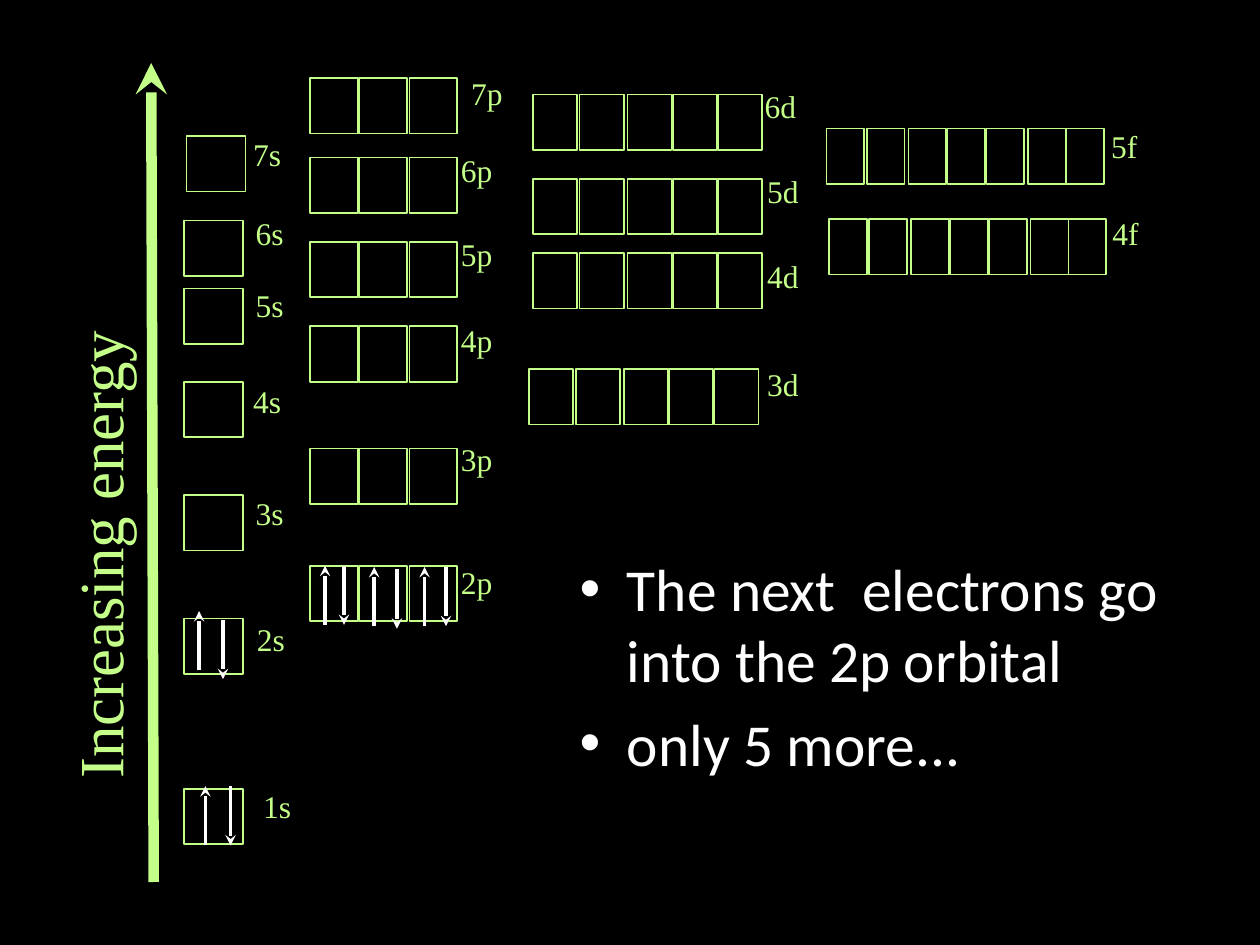
from typing import NamedTuple

from lxml import etree
from pptx import Presentation
from pptx.dml.color import RGBColor
from pptx.enum.shapes import MSO_CONNECTOR, MSO_SHAPE
from pptx.oxml.ns import qn
from pptx.util import Inches, Pt

LINE = MSO_CONNECTOR.STRAIGHT
RECT = MSO_SHAPE.RECTANGLE
BLACK = RGBColor(0, 0, 0)
WHITE = RGBColor(255, 255, 255)
GREEN = RGBColor(0xC4, 0xFF, 0x89)
SERIF = "Times New Roman"
HIGH = 0.44
SPIN = 0.47


class Kind(NamedTuple):
    """Box width and the left offset of each box in a subshell."""
    wide: float
    steps: tuple[float, ...]


class Level(NamedTuple):
    name: str
    left: float
    top: float
    tag_x: float
    tag_y: float


class Spin(NamedTuple):
    """An arrow at x, with the top of its shaft, pointing up or down."""
    x: float
    top: float
    up: bool


KINDS = {
    "s": Kind(0.47, (0,)),
    "p": Kind(0.38, (0, 0.39, 0.79)),
    "d": Kind(0.35, (0, 0.37, 0.75, 1.11, 1.47)),
    "f": Kind(0.3, (0, 0.32, 0.65, 0.96, 1.27, 1.6, 1.9)),
}

LEVELS = [
    Level("1s", 1.46, 6.26, 1.99, 6.2),
    Level("2s", 1.46, 4.91, 1.94, 4.87),
    Level("3s", 1.46, 3.93, 1.93, 3.87),
    Level("4s", 1.46, 3.03, 1.91, 2.98),
    Level("5s", 1.46, 2.29, 1.93, 2.22),
    Level("6s", 1.46, 1.75, 1.93, 1.65),
    Level("7s", 1.48, 1.08, 1.91, 1.02),
    Level("2p", 2.46, 4.49, 3.56, 4.42),
    Level("3p", 2.46, 3.56, 3.56, 3.44),
    Level("4p", 2.46, 2.59, 3.56, 2.5),
    Level("5p", 2.46, 1.92, 3.56, 1.82),
    Level("6p", 2.46, 1.25, 3.56, 1.15),
    Level("7p", 2.46, 0.62, 3.64, 0.54),
    Level("3d", 4.2, 2.93, 5.99, 2.85),
    Level("4d", 4.23, 2.01, 5.99, 1.99),
    Level("5d", 4.23, 1.42, 5.99, 1.32),
    Level("6d", 4.23, 0.75, 5.97, 0.64),
    Level("4f", 6.58, 1.74, 8.73, 1.65),
    Level("5f", 6.56, 1.02, 8.72, 0.96),
]

SPINS = [
    Spin(1.63, 6.24, True), Spin(1.83, 6.24, False),
    Spin(1.58, 4.85, True), Spin(1.77, 4.92, False),
    Spin(2.58, 4.49, True), Spin(2.73, 4.49, False),
    Spin(2.97, 4.5, True), Spin(3.15, 4.52, False),
    Spin(3.37, 4.5, True), Spin(3.54, 4.5, False),
]


def add_text(shapes, text: str, x: float, y: float, w: float, h: float,
             size: int):
    box = shapes.add_textbox(Inches(x), Inches(y), Inches(w), Inches(h))
    frame = box.text_frame
    frame.word_wrap = True
    frame.text = text
    font = frame.paragraphs[0].runs[0].font
    font.name, font.size = SERIF, Pt(size)
    font.color.rgb = GREEN
    return box


def add_arrow(shapes, x1: float, y1: float, x2: float, y2: float,
              color: RGBColor, width: int) -> None:
    """Draw a line with a stealth head at its second point."""
    arrow = shapes.add_connector(LINE, Inches(x1), Inches(y1),
                                 Inches(x2), Inches(y2))
    arrow.line.color.rgb = color
    arrow.line.width = Pt(width)
    props = arrow.element.spPr
    etree.SubElement(props.find(qn("a:ln")), qn("a:tailEnd"), type="stealth")
    etree.SubElement(props, qn("a:effectLst"))


def add_level(shapes, level: Level) -> None:
    """Draw a subshell's row of boxes and its label."""
    kind = KINDS[level.name[-1]]
    for step in kind.steps:
        box = shapes.add_shape(RECT, Inches(level.left + step),
                               Inches(level.top), Inches(kind.wide),
                               Inches(HIGH))
        box.shadow.inherit = False
        box.fill.background()
        box.line.color.rgb = GREEN
        box.line.width = Pt(1)
    add_text(shapes, level.name, level.tag_x, level.tag_y, 0.68, 0.63, 18)


def add_spin(shapes, spin: Spin) -> None:
    ends = [spin.top, spin.top + SPIN]
    if spin.up:
        ends.reverse()
    add_arrow(shapes, spin.x, ends[0], spin.x, ends[1], WHITE, 2)


def add_notes(slide) -> None:
    """Fill the body placeholder with the bullets."""
    title = slide.shapes.title.element
    title.getparent().remove(title)
    body = slide.placeholders[1]
    body.left, body.top = Inches(4.5), Inches(4.33)
    body.width, body.height = Inches(4.93), Inches(2.62)
    frame = body.text_frame
    frame.text = "The next  electrons go into the 2p orbital\nonly 5 more..."
    frame.paragraphs[0].space_before = Pt(0)
    for para in frame.paragraphs:
        font = para.runs[0].font
        font.name, font.size = "Calibri", Pt(34)
        para.font.color.rgb = font.color.rgb = WHITE


def main() -> None:
    deck = Presentation()
    deck.slide_width, deck.slide_height = Inches(10), Inches(7.5)
    slide = deck.slides.add_slide(deck.slide_layouts[1])
    slide.background.fill.solid()
    slide.background.fill.fore_color.rgb = BLACK
    shapes = slide.shapes

    add_notes(slide)
    add_arrow(shapes, 1.22, 7, 1.2, 0.5, GREEN, 6)
    axis = add_text(shapes, "Increasing energy", -1.54, 3.61, 4.64, 0.7, 36)
    axis.rotation = 270
    for level in LEVELS:
        add_level(shapes, level)
    for spin in SPINS:
        add_spin(shapes, spin)
    deck.save("out.pptx")


if __name__ == "__main__":
    main()
